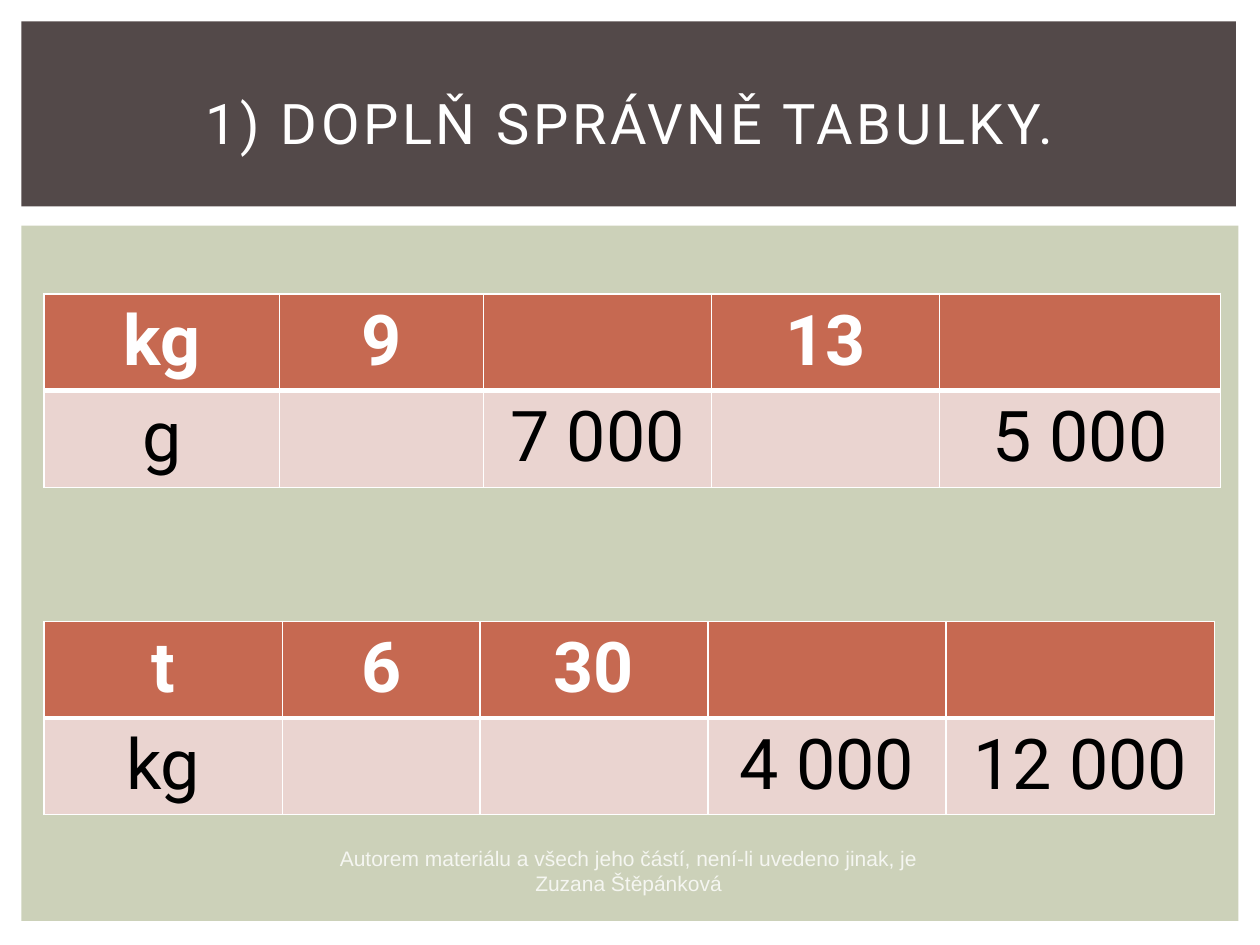
"""Build a worksheet slide with two unit conversion tables to complete."""
from lxml.etree import SubElement
from pptx import Presentation
from pptx.enum.shapes import MSO_SHAPE
from pptx.enum.text import MSO_ANCHOR, PP_ALIGN
from pptx.dml.color import RGBColor
from pptx.oxml import parse_xml
from pptx.oxml.ns import nsdecls, qn
from pptx.util import Pt

WHITE = "FFFFFF"


def paint(fill, color):
    fill.solid()
    fill.fore_color.rgb = RGBColor.from_string(color)


def write_text(frame, text, size=40, color=WHITE, font="Roboto", bold=False, spacing=0):
    frame.word_wrap = True
    paragraph = frame.paragraphs[0]
    paragraph.alignment = PP_ALIGN.CENTER
    run = paragraph.add_run()
    run.text = text
    run.font.name = font
    run.font.size = Pt(size)
    run.font.bold = bold
    paint(run.font.fill, color)
    if spacing:
        run.font._element.set("spc", str(spacing * 100))


presentation = Presentation()
presentation.slide_width = Pt(720)
presentation.slide_height = Pt(540)
slide = presentation.slides.add_slide(presentation.slide_layouts[6])

panels = [(128.9, 695.5, 397.4, "CCD1B9"), (12.2, 694.1, 105.8, "534949")]
for top, width, height, color in panels:
    panel = slide.shapes.add_shape(
        MSO_SHAPE.RECTANGLE, Pt(12.2), Pt(top), Pt(width), Pt(height))
    panel.shadow.inherit = False
    paint(panel.fill, color)
    panel.line.fill.background()

title = slide.shapes.add_textbox(Pt(30.2), Pt(28.5), Pt(660), Pt(83))
title.text_frame.vertical_anchor = MSO_ANCHOR.MIDDLE
write_text(title.text_frame, "1) DOPLŇ SPRÁVNĚ TABULKY.", size=32, spacing=2)

tables = [
    (168, [134.6, 116.6, 130.3, 130.3, 160.6],
     [["kg", "9", "", "13", ""], ["g", "", "7 000", "", "5 000"]]),
    (355, [136.1, 113, 130.3, 136.1, 153.4],
     [["t", "6", "30", "", ""], ["kg", "", "", "4 000", "12 000"]]),
]
row_styles = [
    {"fill": "C66951", "color": WHITE, "bold": True, "top": 1, "bottom": 3},
    {"fill": "EAD4D0", "color": "000000", "bold": False, "top": 3, "bottom": 1},
]
for top, widths, rows in tables:
    table = slide.shapes.add_table(
        len(rows), len(widths), Pt(25.2), Pt(top), Pt(sum(widths)), Pt(108)).table
    for column, width in zip(table.columns, widths):
        column.width = Pt(width)
    for row_index, (values, style) in enumerate(zip(rows, row_styles)):
        for column_index, value in enumerate(values):
            cell = table.cell(row_index, column_index)
            paint(cell.fill, style["fill"])
            if value:
                write_text(cell.text_frame, value, color=style["color"], bold=style["bold"])
            borders = [("lnL", 1), ("lnR", 1), ("lnT", style["top"]), ("lnB", style["bottom"])]
            properties = cell._tc.get_or_add_tcPr()
            for position, (side, weight) in enumerate(borders):
                border = parse_xml(f'<a:{side} {nsdecls("a")} w="{Pt(weight)}"/>')
                fill = SubElement(border, qn("a:solidFill"))
                SubElement(fill, qn("a:srgbClr"), val=WHITE)
                properties.insert(position, border)

credit = slide.shapes.add_textbox(Pt(179.3), Pt(479.5), Pt(360), Pt(36))
write_text(credit.text_frame,
           "Autorem materiálu a všech jeho částí, není-li uvedeno jinak, je Zuzana Štěpánková",
           size=12, color="F5F6F1", font="Arial")

presentation.save("out.pptx")
